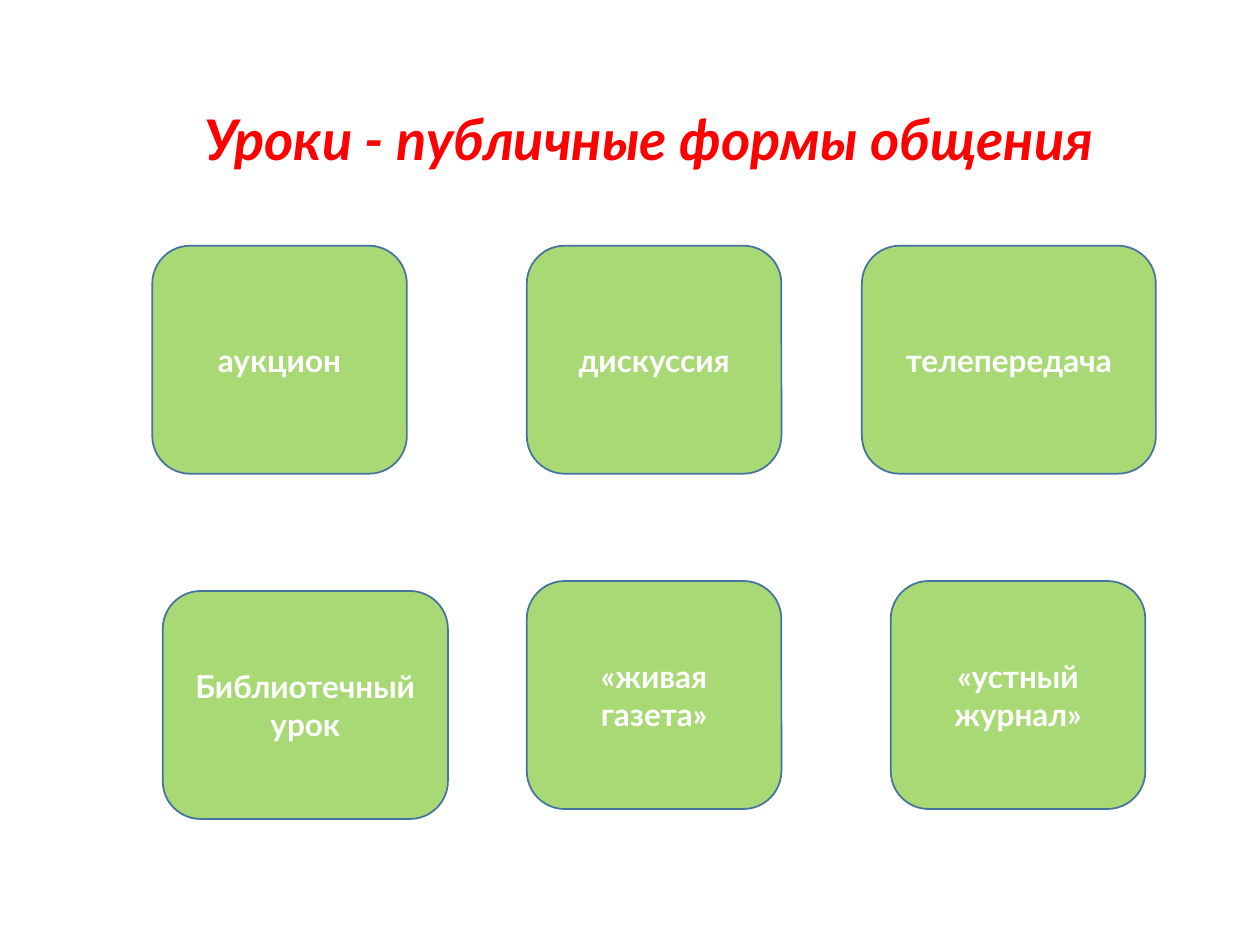
from dataclasses import dataclass

from lxml import etree
from pptx import Presentation
from pptx.dml.color import RGBColor as RGB
from pptx.enum.shapes import MSO_SHAPE as SHAPE
from pptx.enum.text import MSO_ANCHOR as ANCHOR, MSO_AUTO_SIZE as AUTO, PP_ALIGN as ALIGN
from pptx.oxml.ns import qn
from pptx.util import Pt


@dataclass(frozen=True)
class Theme:
    font: str = "Lato"
    title: RGB = RGB(0xFF, 0, 0)
    label: RGB = RGB(0xFF, 0xFF, 0xFF)
    card: RGB = RGB(0x92, 0xD0, 0x50)
    border: RGB = RGB(0x43, 0x73, 0x9E)
    card_opacity: int = 79
    title_size: int = 32
    label_size: int = 18


THEME = Theme()
TITLE_FONT = {"name": THEME.font, "size": Pt(THEME.title_size), "bold": True, "italic": True}
LABEL_FONT = {"name": THEME.font, "size": Pt(THEME.label_size), "bold": True}

TITLE_BOX = (79, 56, 584, 46)
CARD_HEIGHT = 130.3
CARDS = [
    ("аукцион", 87, 140.4, 145.5),
    ("Библиотечный урок", 93, 337.7, 163),
    ("«живая газета»", 301, 332, 145.5),
    ("«устный журнал»", 509, 332, 145.5),
    ("телепередача", 492.5, 140.4, 168),
    ("дискуссия", 301, 140.4, 145.5),
]


def set_attrs(obj, values):
    for name, value in values.items():
        setattr(obj, name, value)


def write(tf, text, font, color):
    p = tf.paragraphs[0]
    p.alignment = ALIGN.CENTER
    r = p.add_run()
    r.text = text
    set_attrs(r.font, font)
    r.font.color.rgb = color


def add_card(shapes, box, text):
    sp = shapes.add_shape(SHAPE.ROUNDED_RECTANGLE, *map(Pt, box))
    sp.shadow.inherit = False
    sp.fill.solid()
    sp.fill.fore_color.rgb = THEME.card
    clr = sp.fill._xPr.find(qn("a:solidFill")).find(qn("a:srgbClr"))
    etree.SubElement(clr, qn("a:alpha"), val=str(THEME.card_opacity * 1000))
    sp.line.color.rgb = THEME.border
    sp.line.width = Pt(1)
    set_attrs(sp.text_frame, {"word_wrap": True, "vertical_anchor": ANCHOR.MIDDLE})
    write(sp.text_frame, text, LABEL_FONT, THEME.label)


def add_cards(slide):
    group = slide.shapes.add_group_shape()
    for text, left, top, width in CARDS:
        add_card(group.shapes, (left, top, width, CARD_HEIGHT), text)


def add_title(slide, box, text):
    tf = slide.shapes.add_textbox(*map(Pt, box)).text_frame
    set_attrs(tf, {"word_wrap": False, "auto_size": AUTO.SHAPE_TO_FIT_TEXT})
    write(tf, text, TITLE_FONT, THEME.title)


def main():
    prs = Presentation()
    set_attrs(prs, {"slide_width": Pt(720), "slide_height": Pt(540)})
    slide = prs.slides.add_slide(prs.slide_layouts[6])
    add_cards(slide)
    add_title(slide, TITLE_BOX, "Уроки - публичные формы общения")
    prs.save("out.pptx")


if __name__ == "__main__":
    main()
